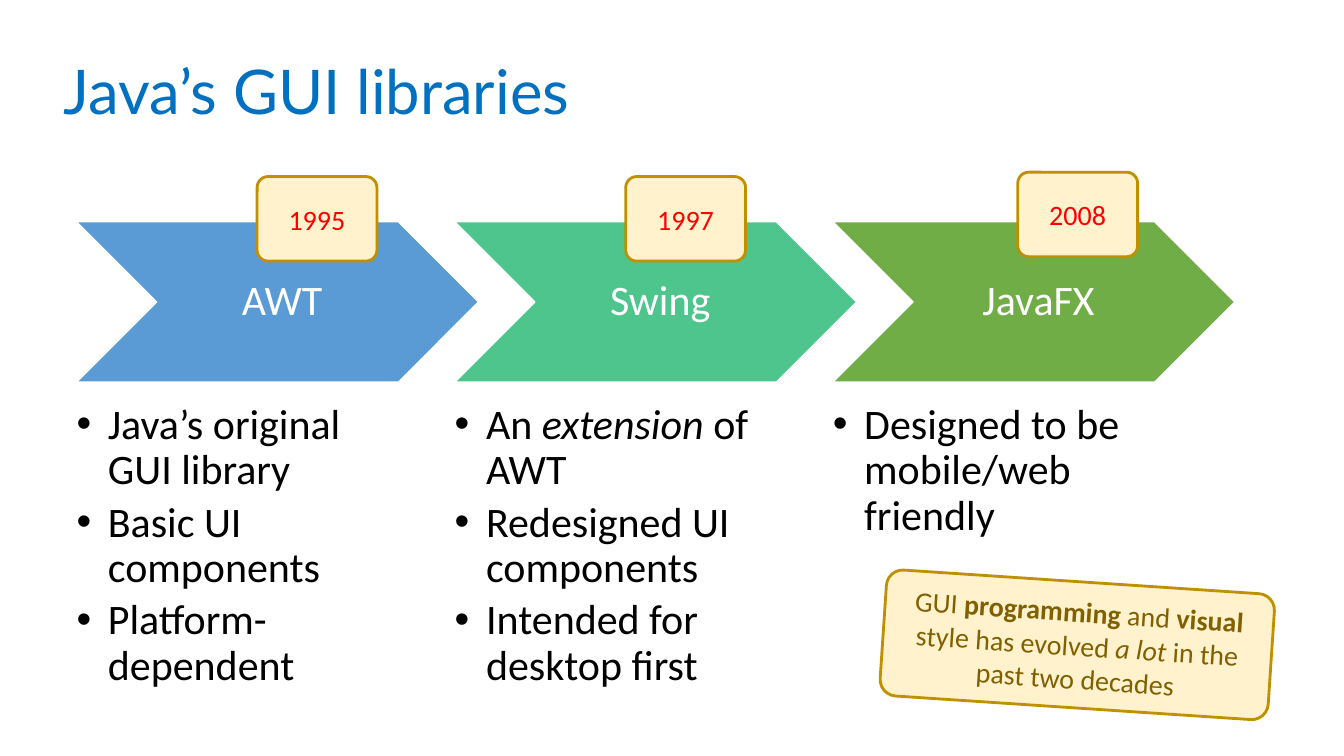
"""Build the slide on the history of Java's GUI libraries."""
from dataclasses import dataclass

from lxml.etree import SubElement
from pptx import Presentation
from pptx.dml.color import RGBColor
from pptx.enum.shapes import MSO_SHAPE as Preset
from pptx.enum.text import MSO_ANCHOR as Anchor, PP_ALIGN as Align
from pptx.oxml.ns import qn
from pptx.util import Cm, Pt

CHEVRON_LEFT, CHEVRON_TOP, CHEVRON_PITCH = 1.93, 5.59, 9.53
CHEVRON_WIDTH, CHEVRON_HEIGHT = 10.13, 4.04
BULLETS_TOP, BULLETS_WIDTH, BULLETS_HEIGHT = 10.16, 8.1, 7.49
BULLET_INDENT = 0.79
BADGE_WIDTH, BADGE_HEIGHT = 3.02, 2.13


@dataclass(frozen=True)
class Span:
    text: str
    bold: bool = False
    italic: bool = False


@dataclass(frozen=True)
class Stage:
    name: str
    color: str
    year: str
    badge_left: float
    badge_top: float
    bullets: tuple[tuple[Span, ...], ...]


STAGES = (
    Stage("AWT", "5B9BD5", "1995", 6.48, 4.45, (
        (Span("Java’s original GUI library"),),
        (Span("Basic UI components"),),
        (Span("Platform-dependent"),),
    )),
    Stage("Swing", "4DC58D", "1997", 15.77, 4.45, (
        (Span("An "), Span("extension ", italic=True), Span("of AWT")),
        (Span("Redesigned UI components"),),
        (Span("Intended for desktop first"),),
    )),
    Stage("JavaFX", "70AD47", "2008", 25.65, 4.34, (
        (Span("Designed to be mobile/web friendly"),),
    )),
)
REMARK = (
    Span("GUI "), Span("programming", bold=True), Span(" and "),
    Span("visual ", bold=True), Span("style has evolved "),
    Span("a lot", italic=True), Span(" in the past two decades"),
)


def rgb(color: str) -> RGBColor:
    """Turn a hex string into a colour."""
    return RGBColor.from_string(color)


def write(para, spans: tuple[Span, ...], size: float, color: str, font: str = "Calibri") -> None:
    """Fill a paragraph with spans in one font."""
    para.font.name, para.font.size = font, Pt(size)
    para.font.color.rgb = rgb(color)
    for item in spans:
        span = para.add_run()
        span.text = item.text
        if item.bold:
            span.font.bold = True
        if item.italic:
            span.font.italic = True


def set_margins(frame, left: float, other: float) -> None:
    """Set the insets of a text frame in centimetres."""
    frame.margin_left = Cm(left)
    frame.margin_top = frame.margin_right = frame.margin_bottom = Cm(other)


def add_box(page, preset, left: float, top: float, width: float, height: float,
            fill: str, line: str, weight: float):
    """Add a flat preset shape with wrapped, centred text."""
    box = page.shapes.add_shape(preset, Cm(left), Cm(top), Cm(width), Cm(height))
    box.shadow.inherit = False
    box.fill.solid()
    box.fill.fore_color.rgb = rgb(fill)
    box.line.color.rgb = rgb(line)
    box.line.width = Pt(weight)
    frame = box.text_frame
    frame.word_wrap = True
    frame.vertical_anchor = Anchor.MIDDLE
    frame.paragraphs[0].alignment = Align.CENTER
    return box


def add_text(page, left: float, top: float, width: float, height: float):
    """Add a wrapped text box and return its frame."""
    box = page.shapes.add_textbox(Cm(left), Cm(top), Cm(width), Cm(height))
    box.text_frame.word_wrap = True
    return box.text_frame


def add_note(page, left: float, top: float, width: float, height: float,
             spans: tuple[Span, ...], color: str):
    """Add a yellow rounded note."""
    note = add_box(page, Preset.ROUNDED_RECTANGLE, left, top, width, height,
                   "FFF2CC", "BF9000", 2)
    note.adjustments[0] = 0.13
    write(note.text_frame.paragraphs[0], spans, 20, color)
    return note


def add_bullet(para) -> None:
    """Give a paragraph a hanging bullet."""
    properties = para._p.get_or_add_pPr()
    properties.set("marL", str(Cm(BULLET_INDENT)))
    properties.set("indent", str(-Cm(BULLET_INDENT)))
    SubElement(properties, qn("a:buFont")).set("typeface", "Arial")
    SubElement(properties, qn("a:buChar")).set("char", "•")


def add_stage(page, stage: Stage, left: float) -> None:
    """Add a chevron with its bullet list below."""
    chevron = add_box(page, Preset.CHEVRON, left, CHEVRON_TOP, CHEVRON_WIDTH,
                      CHEVRON_HEIGHT, stage.color, "FFFFFF", 1)
    set_margins(chevron.text_frame, 0.33, 0.1)
    label = chevron.text_frame.paragraphs[0]
    label.line_spacing = 0.9
    write(label, (Span(stage.name),), 30, "FFFFFF")

    frame = add_text(page, left, BULLETS_TOP, BULLETS_WIDTH, BULLETS_HEIGHT)
    set_margins(frame, 0, 0)
    for index, spans in enumerate(stage.bullets):
        para = frame.add_paragraph() if index else frame.paragraphs[0]
        add_bullet(para)
        para.line_spacing = 0.9
        para.space_after = Pt(5)
        write(para, spans, 30, "000000")


def main() -> None:
    """Build and save the deck."""
    deck = Presentation()
    deck.slide_width, deck.slide_height = Cm(33.87), Cm(19.05)
    page = deck.slides.add_slide(deck.slide_layouts[6])

    for index, stage in enumerate(STAGES):
        add_stage(page, stage, CHEVRON_LEFT + index * CHEVRON_PITCH)

    title = add_text(page, 1.35, 1.3, 18.97, 2.18)
    title.vertical_anchor = Anchor.MIDDLE
    title.paragraphs[0].line_spacing = 0.9
    write(title.paragraphs[0], (Span("Java’s GUI libraries"),), 44, "0070C0", "Lato")

    remark = add_note(page, 22.25, 14.66, 9.8, 3.18, REMARK, "806000")
    remark.rotation = 3.8
    for stage in STAGES:
        add_note(page, stage.badge_left, stage.badge_top, BADGE_WIDTH, BADGE_HEIGHT,
                 (Span(stage.year),), "FF0000")

    deck.save("out.pptx")


if __name__ == "__main__":
    main()
